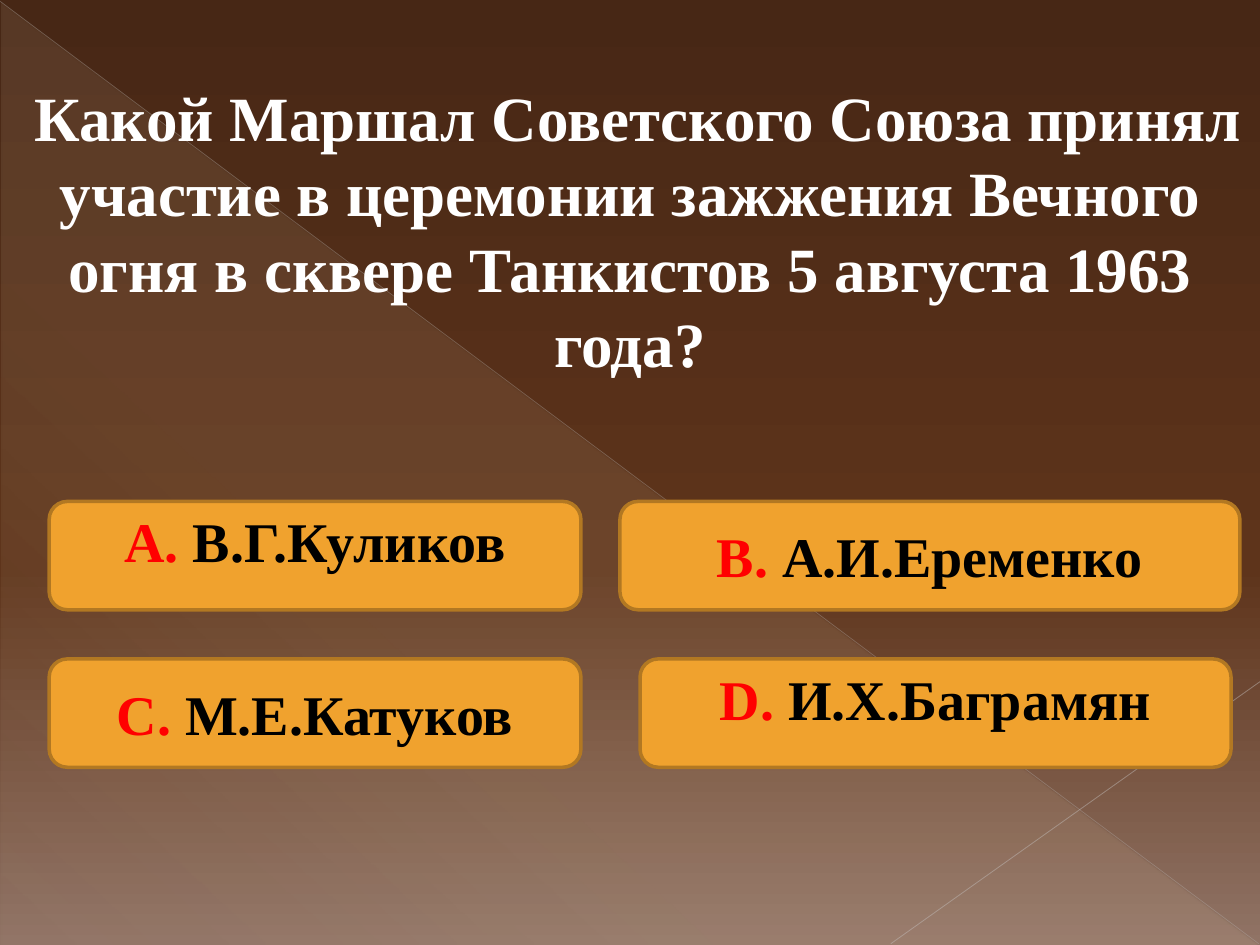
"""Build a quiz slide with one question and four answer buttons."""
from dataclasses import dataclass

from lxml import etree
from pptx import Presentation
from pptx.dml.color import RGBColor
from pptx.enum import shapes, text
from pptx.oxml import ns
from pptx.util import Inches, Pt


@dataclass(frozen=True)
class Theme:
    """Colours, font and type sizes of the slide."""
    font: str = "Times New Roman"
    question_size: int = 36
    answer_size: int = 32
    white: str = "FFFFFF"
    black: str = "000000"
    letter: str = "FF0000"
    button: str = "F0A22E"
    button_line: str = "B27822"
    backdrop: tuple = ((0, "472715", 100), (60, "5E341B", 100), (100, "907365", 100))
    glow: tuple = ((0, "FBEEC9", 10), (70, "FBEEC9", 8), (100, "FBEEC9", 1))


THEME = Theme()


def colour(value):
    """Turn a hex string into a colour."""
    return RGBColor.from_string(value)


def add_alpha(parent, percent):
    """Set the opacity of a colour element."""
    etree.SubElement(parent, ns.qn("a:alpha"), val=str(percent * 1000))


def set_gradient(fill, holder, stops, angle):
    """Fill with a linear gradient of (position, colour, opacity) stops."""
    fill.gradient()
    gradient = holder.find(".//" + ns.qn("a:gradFill"))
    stop_list = gradient.find(ns.qn("a:gsLst"))
    for stop in list(stop_list):
        stop_list.remove(stop)
    for position, value, opacity in stops:
        stop = etree.SubElement(stop_list, ns.qn("a:gs"), pos=str(position * 1000))
        add_alpha(etree.SubElement(stop, ns.qn("a:srgbClr"), val=value), opacity)
    linear = gradient.find(ns.qn("a:lin"))
    linear.set("ang", str(angle * 60000))
    linear.set("scaled", "0")


def add_glow(slide):
    """Add the pale triangle in the lower left half."""
    triangle = slide.shapes.add_shape(shapes.MSO_SHAPE.RIGHT_TRIANGLE, Inches(0.01),
                                      Inches(0.02), Inches(9.98), Inches(7.48))
    triangle.shadow.inherit = False
    triangle.line.fill.background()
    set_gradient(triangle.fill, triangle.element.spPr, THEME.glow, 133)


def add_ray(slide, start, end, value, width, opacity):
    """Add a thin translucent line."""
    ray = slide.shapes.add_connector(shapes.MSO_CONNECTOR.STRAIGHT,
                                     *map(Inches, start + end))
    ray.line.color.rgb = colour(value)
    ray.line.width = Pt(width)
    properties = ray.element.spPr
    add_alpha(properties.find(".//" + ns.qn("a:srgbClr")), opacity)
    etree.SubElement(properties, ns.qn("a:effectLst"))


def style_paragraph(paragraph, size):
    """Centre a paragraph and set its bold font."""
    paragraph.alignment = text.PP_ALIGN.CENTER
    paragraph.font.name = THEME.font
    paragraph.font.size = Pt(size)
    paragraph.font.bold = True


def add_question(slide, wording):
    """Place the question in the title, in front of the backdrop."""
    title = slide.shapes.title
    title.left, title.top = Inches(0), Inches(0.57)
    title.width, title.height = Inches(10), Inches(3.13)
    title.element.getparent().append(title.element)
    frame = title.text_frame
    frame.text = wording
    frame.word_wrap = True
    frame.auto_size = text.MSO_AUTO_SIZE.NONE
    frame.vertical_anchor = text.MSO_ANCHOR.TOP
    paragraph = frame.paragraphs[0]
    style_paragraph(paragraph, THEME.question_size)
    paragraph.font.color.rgb = colour(THEME.white)


def add_answer(slide, left, top, width, letter, name, anchor):
    """Add an answer button with a coloured letter."""
    button = slide.shapes.add_shape(shapes.MSO_SHAPE.FLOWCHART_ALTERNATE_PROCESS,
                                    Inches(left), Inches(top), Inches(width), Inches(0.86))
    button.shadow.inherit = False
    button.fill.solid()
    button.fill.fore_color.rgb = colour(THEME.button)
    button.line.color.rgb = colour(THEME.button_line)
    button.line.width = Pt(2)
    frame = button.text_frame
    frame.word_wrap = True
    frame.vertical_anchor = anchor
    frame.margin_top = frame.margin_bottom = 0
    paragraph = frame.paragraphs[0]
    style_paragraph(paragraph, THEME.answer_size)
    for wording, value in ((letter + " ", THEME.letter), (name, THEME.black)):
        run = paragraph.add_run()
        run.text = wording
        run.font.color.rgb = colour(value)


def main():
    """Build and save the slide."""
    presentation = Presentation()
    presentation.slide_width, presentation.slide_height = Inches(10), Inches(7.5)
    slide = presentation.slides.add_slide(presentation.slide_layouts[5])
    set_gradient(slide.background.fill, slide.element, THEME.backdrop, 90)
    add_glow(slide)
    add_ray(slide, (0, 0.01), (9.99, 7.49), "BCB7B4", 0.39, 35)
    add_ray(slide, (10, 5.41), (7.07, 7.49), "C4BFBD", 0.47, 45)
    add_question(slide, " Какой Маршал Советского Союза принял участие в церемонии "
                        "зажжения Вечного огня в сквере Танкистов 5 августа 1963 года?")
    first_row, second_row = 3.98, 5.23
    high, middle = text.MSO_ANCHOR.TOP, text.MSO_ANCHOR.MIDDLE
    add_answer(slide, 0.39, first_row, 4.22, "А.", "В.Г.Куликов", high)
    add_answer(slide, 4.92, first_row, 4.92, "В.", "А.И.Еременко", middle)
    add_answer(slide, 5.08, second_row, 4.69, "D.", "И.Х.Баграмян", high)
    add_answer(slide, 0.39, second_row, 4.22, "С.", "М.Е.Катуков", middle)
    presentation.save("out.pptx")


if __name__ == "__main__":
    main()
